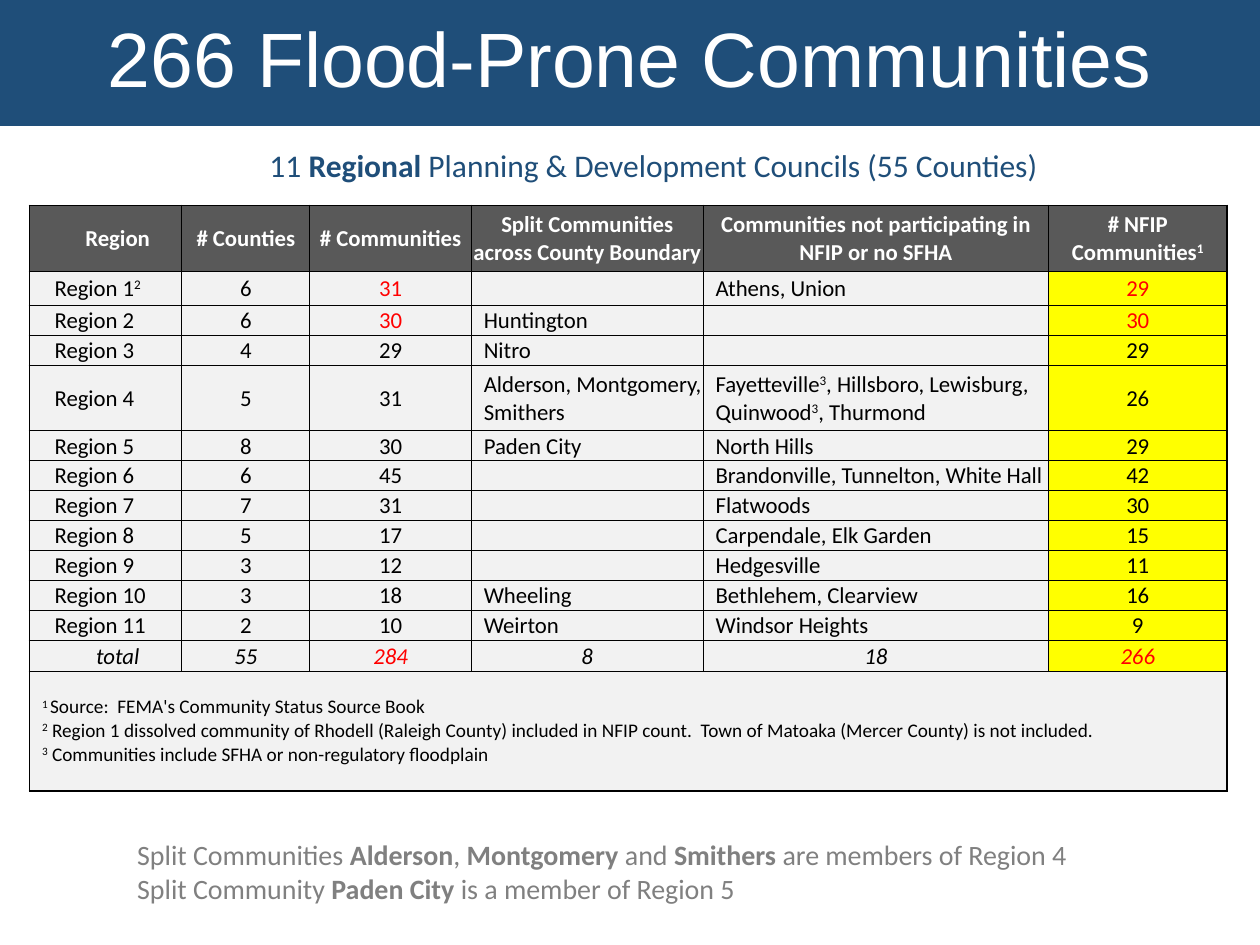
from lxml.etree import SubElement
from pptx import Presentation
from pptx.dml.color import RGBColor
from pptx.enum.text import MSO_ANCHOR as Anchor, MSO_AUTO_SIZE as AutoSize, PP_ALIGN as Align
from pptx.oxml.ns import qn
from pptx.util import Pt

COLORS = {"navy": "1F4E79", "white": "FFFFFF", "black": "000000", "red": "FF0000",
          "header": "595959", "cell": "F2F2F2", "highlight": "FFFF00", "gray": "808080"}

# Content: text between bars is raised in the table and bold in the text boxes
TITLE = "266 Flood-Prone Communities"
SUBTITLE = ["11 |Regional| Planning & Development Councils (55 Counties)"]
MEMBERSHIP = [
    "Split Communities |Alderson|, |Montgomery| and |Smithers| are members of Region 4",
    "Split Community |Paden City| is a member of Region 5",
]
ROWS = [
    ("Region", "# Counties", "# Communities", "Split Communities across County Boundary",
     "Communities not participating in NFIP or no SFHA", "# NFIP Communities|1|"),
    ("Region 1|2|", "6", "31", "", "Athens, Union", "29"),
    ("Region 2", "6", "30", "Huntington", "", "30"),
    ("Region 3", "4", "29", "Nitro", "", "29"),
    ("Region 4", "5", "31", "Alderson, Montgomery, Smithers",
     "Fayetteville|3|, Hillsboro, Lewisburg, Quinwood|3|, Thurmond", "26"),
    ("Region 5", "8", "30", "Paden City", "North Hills", "29"),
    ("Region 6", "6", "45", "", "Brandonville, Tunnelton, White Hall", "42"),
    ("Region 7", "7", "31", "", "Flatwoods", "30"),
    ("Region 8", "5", "17", "", "Carpendale, Elk Garden", "15"),
    ("Region 9", "3", "12", "", "Hedgesville", "11"),
    ("Region 10", "3", "18", "Wheeling", "Bethlehem, Clearview", "16"),
    ("Region 11", "2", "10", "Weirton", "Windsor Heights", "9"),
    ("total", "55", "284", "8", "18", "266"),
]
FOOTNOTES = [
    "|1 |Source:  FEMA's Community Status Source Book",
    "|2| Region 1 dissolved community of Rhodell (Raleigh County) included in NFIP count.  "
    "Town of Matoaka (Mercer County) is not included.",
    "|3| Communities include SFHA or non-regulatory floodplain",
]

TOTAL, NOTES = len(ROWS) - 1, len(ROWS)
LAST = len(ROWS[0]) - 1
RED_ROWS, RED_COLUMNS = (1, 2, TOTAL), (2, LAST)
NAME_COLUMNS = (0, 3, 4)
COLUMN_WIDTHS = [87, 73.3, 92.2, 132.5, 197.4, 102]
ROW_HEIGHT = 17.1
TALL_ROWS = {0: 37.6, 1: 19.4, 4: 37.6, TOTAL: 17.8, NOTES: 68.4}


def rgb(name):
    return RGBColor.from_string(COLORS[name])


def write(para, text, size, color, raised=False, bold=False, italic=False):
    """Add the text as runs; every second piece is raised or bold."""
    for number, piece in enumerate(text.split("|")):
        if not piece:
            continue
        span = para.add_run()
        span.text = piece
        font = span.font
        font.name, font.size = "Calibri", Pt(size)
        font.color.rgb = rgb(color)
        marked = number % 2 == 1
        font.bold = bold or (marked and not raised)
        font.italic = italic
        if marked and raised:
            font._element.set("baseline", "30000")


def add_text(page, lines, place, size, color):
    box = page.shapes.add_textbox(*map(Pt, place))
    frame = box.text_frame
    frame.word_wrap = True
    frame.auto_size = AutoSize.SHAPE_TO_FIT_TEXT
    for number, line in enumerate(lines):
        para = frame.add_paragraph() if number else frame.paragraphs[0]
        write(para, line, size, color)


def style_cell(cell, fill, margins, borders):
    cell.vertical_anchor = Anchor.MIDDLE
    cell.margin_left, cell.margin_top, cell.margin_right, cell.margin_bottom = map(Pt, margins)
    properties = cell._tc.get_or_add_tcPr()
    for side, width in zip("LRTB", borders):
        line = SubElement(properties, qn(f"a:ln{side}"), w=str(Pt(width)))
        solid = SubElement(line, qn("a:solidFill"))
        SubElement(solid, qn("a:srgbClr"), val=COLORS["black"])
    cell.fill.solid()
    cell.fill.fore_color.rgb = rgb(fill)


def fill_cell(cell, row, column, text):
    header, total = row == 0, row == TOTAL
    is_name = column in NAME_COLUMNS and not (header or total)
    fill = "header" if header else "highlight" if column == LAST else "cell"
    indent = 14.4 if column == 0 else 7.2 if is_name else 0.6
    heavy = (column == 0, column == LAST, row in (0, 1), row in (0, TOTAL))
    style_cell(cell, fill, (indent, 0.6, 0.6, 0), [1 if edge else 0.5 for edge in heavy])

    para = cell.text_frame.paragraphs[0]
    para.alignment = Align.LEFT if is_name else Align.CENTER
    red = row in RED_ROWS and column in RED_COLUMNS
    color = "white" if header else "red" if red else "black"
    write(para, text, 13, color, raised=True, bold=header, italic=total)
    if not text:  # keeps blank cells from stretching the row
        SubElement(para._p, qn("a:endParaRPr"), sz="1300")


def add_region_table(page):
    heights = [TALL_ROWS.get(row, ROW_HEIGHT) for row in range(NOTES + 1)]
    place = map(Pt, (16.8, 117.4, sum(COLUMN_WIDTHS), sum(heights)))
    table = page.shapes.add_table(NOTES + 1, LAST + 1, *place).table
    table.first_row = table.horz_banding = False
    for column, width in zip(table.columns, COLUMN_WIDTHS):
        column.width = Pt(width)
    for row, height in zip(table.rows, heights):
        row.height = Pt(height)
    for row, texts in enumerate(ROWS):
        for column, text in enumerate(texts):
            fill_cell(table.cell(row, column), row, column, text)

    # Footnotes across the full width
    notes = table.cell(NOTES, 0)
    notes.merge(table.cell(NOTES, LAST))
    style_cell(notes, "cell", (7.2, 3.6, 7.2, 3.6), [1] * 4)
    para = notes.text_frame.paragraphs[0]
    for number, note in enumerate(FOOTNOTES):
        if number:
            para.add_line_break()
        write(para, note, 11, "black", raised=True)


def add_title(page):
    title = page.shapes.title
    title.left, title.top, title.width, title.height = map(Pt, (0, 0, 720, 72))
    title.fill.solid()
    title.fill.fore_color.rgb = rgb("navy")
    frame = title.text_frame
    frame.text = TITLE
    frame.auto_size = AutoSize.NONE
    frame.vertical_anchor = Anchor.MIDDLE
    para = frame.paragraphs[0]
    para.alignment, para.line_spacing = Align.CENTER, 0.9
    font = para.runs[0].font
    font.name, font.size = "Arial", Pt(44)
    font.color.rgb = rgb("white")


def main():
    deck = Presentation()
    deck.slide_width, deck.slide_height = Pt(720), Pt(540)
    page = deck.slides.add_slide(deck.slide_layouts[5])
    add_title(page)
    add_region_table(page)
    add_text(page, MEMBERSHIP, (71.3, 475.2, 553.7, 46), 16, "gray")
    add_text(page, SUBTITLE, (146.9, 80, 464.4, 29), 18, "navy")
    deck.save("out.pptx")


if __name__ == "__main__":
    main()
